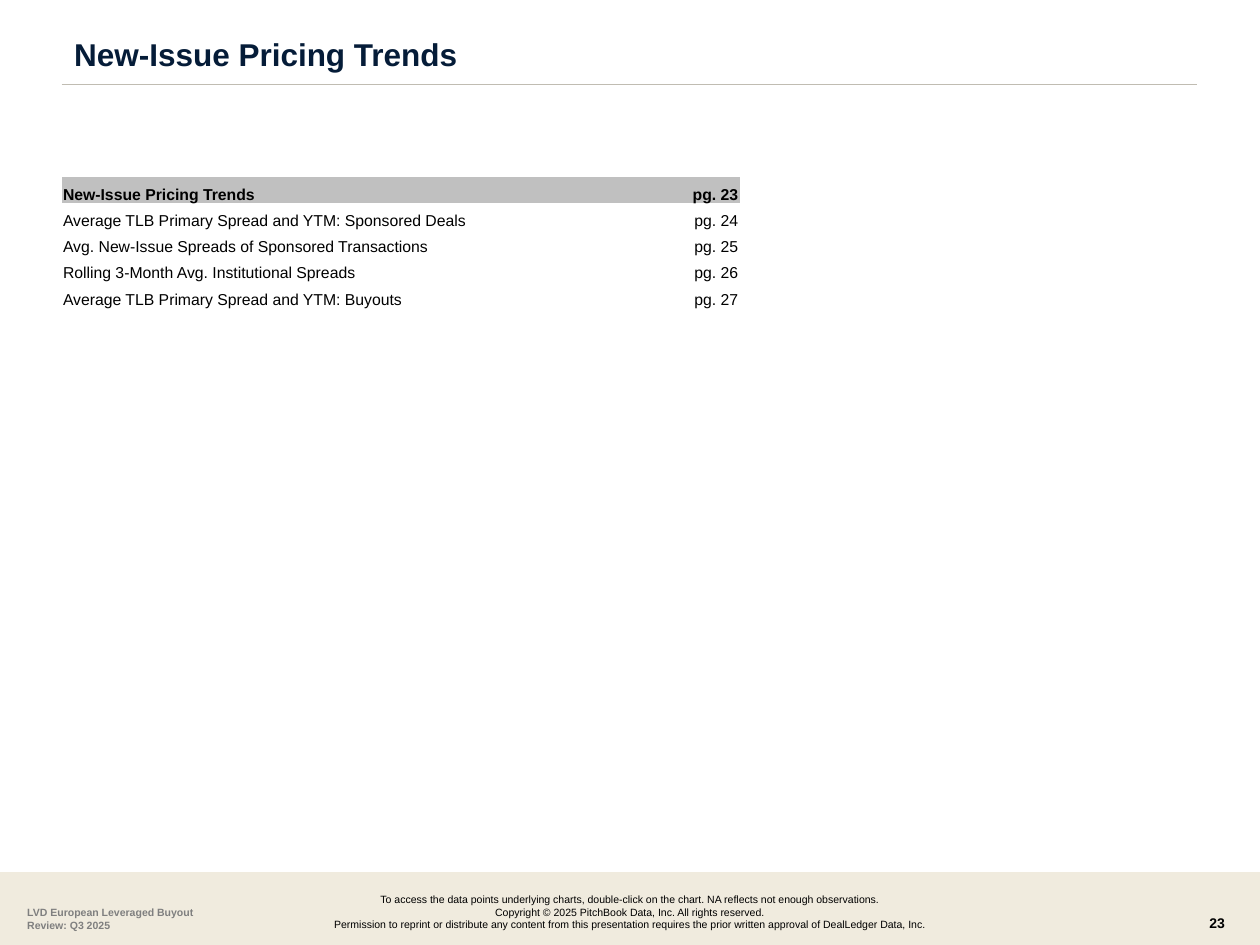
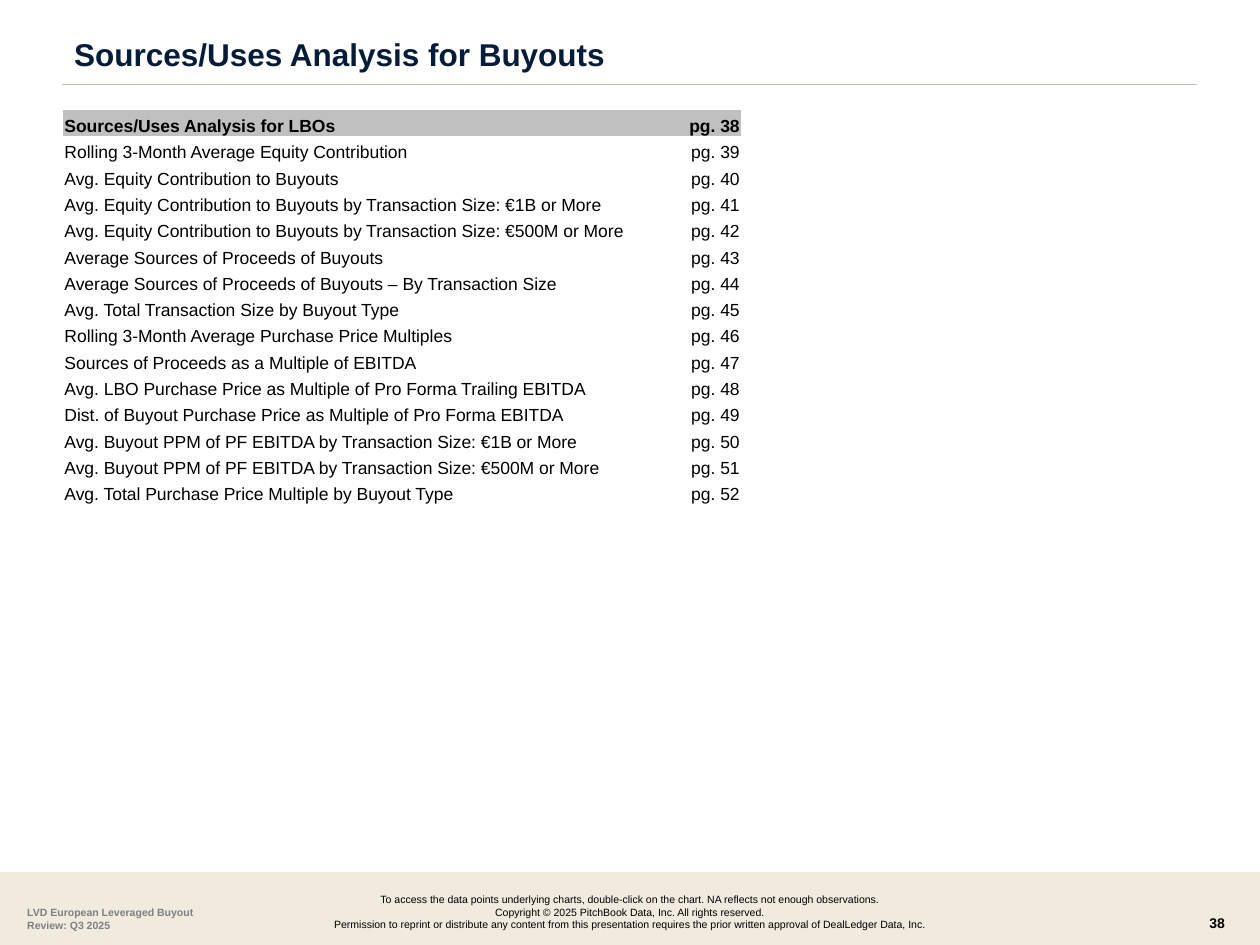
from pptx import Presentation
from pptx.dml.color import RGBColor
from pptx.enum.shapes import MSO_CONNECTOR, MSO_SHAPE
from pptx.enum.text import MSO_ANCHOR, PP_ALIGN
from pptx.oxml import parse_xml
from pptx.oxml.ns import nsdecls, qn
from pptx.util import Cm, Pt

# Enum members
LEFT, CENTER, RIGHT = PP_ALIGN.LEFT, PP_ALIGN.CENTER, PP_ALIGN.RIGHT
BOTTOM = MSO_ANCHOR.BOTTOM
RECT = MSO_SHAPE.RECTANGLE
STRAIGHT = MSO_CONNECTOR.STRAIGHT

# Shared look
FONT = "Arial"
NAVY = RGBColor(0x05, 0x1C, 0x38)
BLACK = RGBColor(0x00, 0x00, 0x00)
GRAY = RGBColor(0x7F, 0x7F, 0x7F)
SILVER = RGBColor(0xC0, 0xC0, 0xC0)
SAND = RGBColor(0xF0, 0xEB, 0xDE)
STONE = RGBColor(0xC0, 0xBC, 0xB2)
PLAIN_STYLE = "{2D5ABB26-0587-4C30-8999-92F81FD0307C}"  # no fill, no grid

WIDTH, HEIGHT = Cm(25.4), Cm(19.05)
BAND_TOP = Cm(17.58)
MARGIN = Cm(1.24)
COLS = Cm(11.79), Cm(1.88)
ROW = Cm(0.53)
PAD = Cm(0.03)

REPORT = "LVD European Leveraged Buyout Review: Q3 2025"
NOTICE = [
    "To access the data points underlying charts, double-click on the chart. "
    "NA reflects not enough observations.",
    "Copyright © 2025 PitchBook Data, Inc. All rights reserved.",
    "Permission to reprint or distribute any content from this presentation "
    "requires the prior written approval of DealLedger Data, Inc.",
]

# Contents of each section
PRICING = [
    "New-Issue Pricing Trends",
    "Average TLB Primary Spread and YTM: Sponsored Deals",
    "Avg. New-Issue Spreads of Sponsored Transactions",
    "Rolling 3-Month Avg. Institutional Spreads",
    "Average TLB Primary Spread and YTM: Buyouts",
]
SOURCES = [
    "Sources/Uses Analysis for LBOs",
    "Rolling 3-Month Average Equity Contribution",
    "Avg. Equity Contribution to Buyouts",
    "Avg. Equity Contribution to Buyouts by Transaction Size: €1B or More",
    "Avg. Equity Contribution to Buyouts by Transaction Size: €500M or More",
    "Average Sources of Proceeds of Buyouts",
    "Average Sources of Proceeds of Buyouts – By Transaction Size",
    "Avg. Total Transaction Size by Buyout Type",
    "Rolling 3-Month Average Purchase Price Multiples",
    "Sources of Proceeds as a Multiple of EBITDA",
    "Avg. LBO Purchase Price as Multiple of Pro Forma Trailing EBITDA",
    "Dist. of Buyout Purchase Price as Multiple of Pro Forma EBITDA",
    "Avg. Buyout PPM of PF EBITDA by Transaction Size: €1B or More",
    "Avg. Buyout PPM of PF EBITDA by Transaction Size: €500M or More",
    "Avg. Total Purchase Price Multiple by Buyout Type",
]


def add_run(para, text, size, color=BLACK, bold=False, align=LEFT):
    para.alignment = align
    run = para.add_run()
    run.text = text
    font = run.font
    font.name, font.size, font.bold = FONT, Pt(size), bold
    font.color.rgb = color


def add_text(slide, box, lines, size, **look):
    frame = slide.shapes.add_textbox(*box).text_frame
    frame.word_wrap = True
    for i, line in enumerate(lines):
        para = frame.add_paragraph() if i else frame.paragraphs[0]
        add_run(para, line, size, **look)


def add_title(slide, text):
    title = slide.shapes.title
    title.left, title.top = MARGIN, Cm(0.69)
    title.width, title.height = Cm(19.51), Cm(0.79)
    frame = title.text_frame
    frame.word_wrap = True
    frame.vertical_anchor = BOTTOM
    frame.margin_top = frame.margin_bottom = 0
    para = frame.paragraphs[0]
    para.line_spacing = 0.9
    add_run(para, text, 18, NAVY, True)


def add_rule(slide):
    y = Cm(1.7)
    rule = slide.shapes.add_connector(STRAIGHT, MARGIN, y, Cm(24.13), y)
    rule.line.color.rgb = STONE
    rule.line.width = Pt(0.75)
    rule.element.spPr.append(parse_xml(f"<a:effectLst {nsdecls('a')}/>"))


def add_footer(slide, page):
    band = slide.shapes.add_shape(RECT, 0, BAND_TOP, WIDTH, HEIGHT - BAND_TOP)
    band.shadow.inherit = False
    band.fill.solid()
    band.fill.fore_color.rgb = SAND
    band.line.fill.background()
    add_text(slide, (Cm(24.13), Cm(18.31), Cm(1.07), Cm(0.64)),
             [str(page)], 8, bold=True)
    add_text(slide, (Cm(2.13), Cm(17.88), Cm(21.13), Cm(1.02)),
             NOTICE, 6, align=CENTER)
    add_text(slide, (Cm(0.3), Cm(18.14), Cm(3.91), Cm(0.76)),
             [REPORT], 6, color=GRAY, bold=True)


def fill_cell(cell, text, size, head, align):
    cell.margin_left = cell.margin_right = cell.margin_top = PAD
    cell.margin_bottom = 0
    cell.vertical_anchor = BOTTOM
    if head:
        cell.fill.solid()
        cell.fill.fore_color.rgb = SILVER
    else:
        cell.fill.background()
    add_run(cell.text_frame.paragraphs[0], text, size, bold=head, align=align)


def add_index(slide, left, top, items, page, size):
    """List the items with page numbers that count up from page."""
    shape = slide.shapes.add_table(len(items), len(COLS), left, top,
                                   sum(COLS), ROW * len(items))
    for style in shape.element.iter(qn("a:tableStyleId")):
        style.text = PLAIN_STYLE
    table = shape.table
    table.first_row = table.horz_banding = False
    for col, width in zip(table.columns, COLS):
        col.width = width
    for i, item in enumerate(items):
        table.rows[i].height = ROW
        fill_cell(table.cell(i, 0), item, size, i == 0, LEFT)
        fill_cell(table.cell(i, 1), f"pg. {page + i}", size, i == 0, RIGHT)


def add_section(deck, title, page, items, left, top, size):
    slide = deck.slides.add_slide(deck.slide_layouts[5])
    add_footer(slide, page)
    add_rule(slide)
    add_title(slide, title)
    add_index(slide, left, top, items, page, size)


def main():
    deck = Presentation()
    deck.slide_width, deck.slide_height = WIDTH, HEIGHT
    add_section(deck, "New-Issue Pricing Trends", 23, PRICING,
                MARGIN, Cm(3.57), 9)
    add_section(deck, "Sources/Uses Analysis for Buyouts", 38, SOURCES,
                Cm(1.27), Cm(2.22), 10)
    deck.save("out.pptx")


if __name__ == "__main__":
    main()
